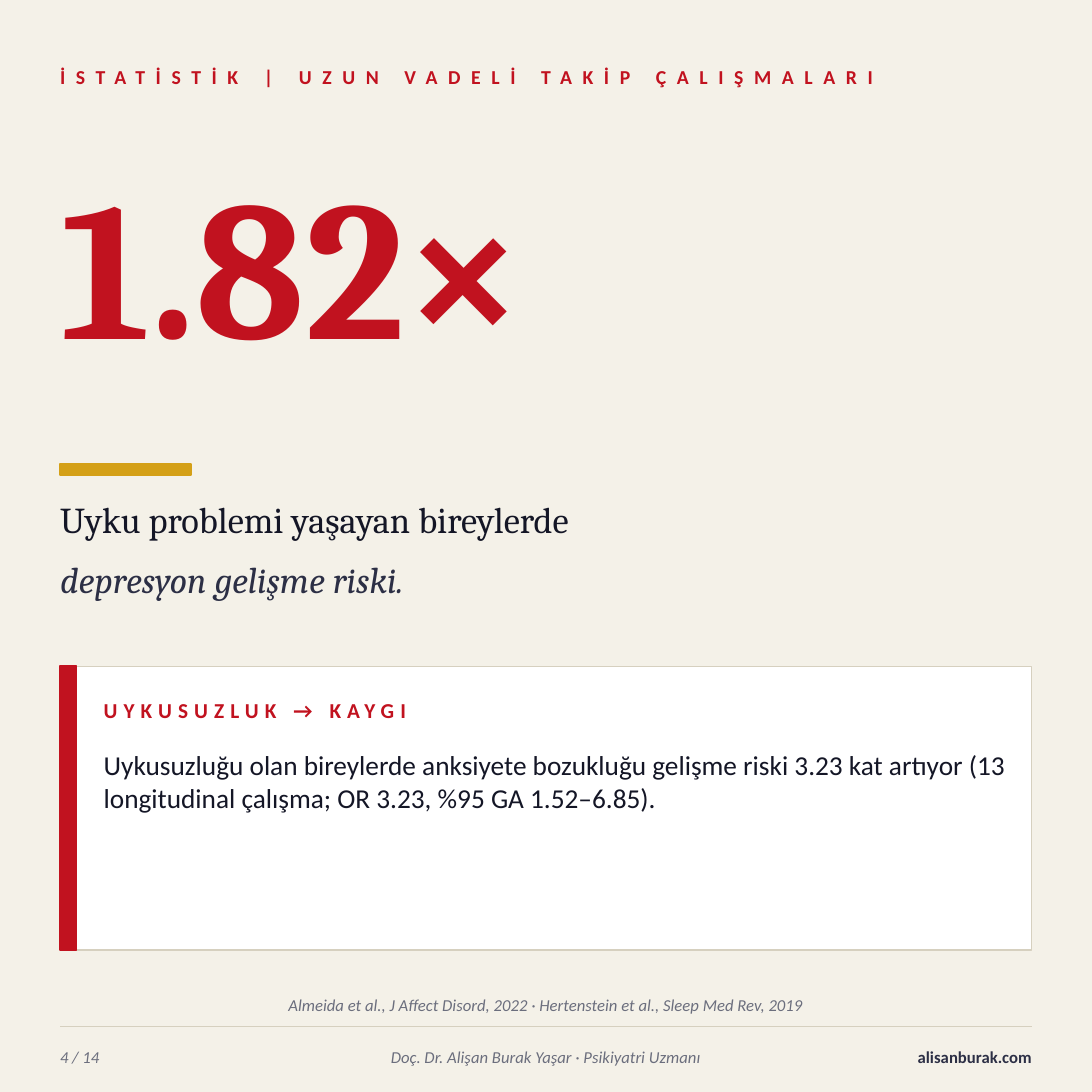
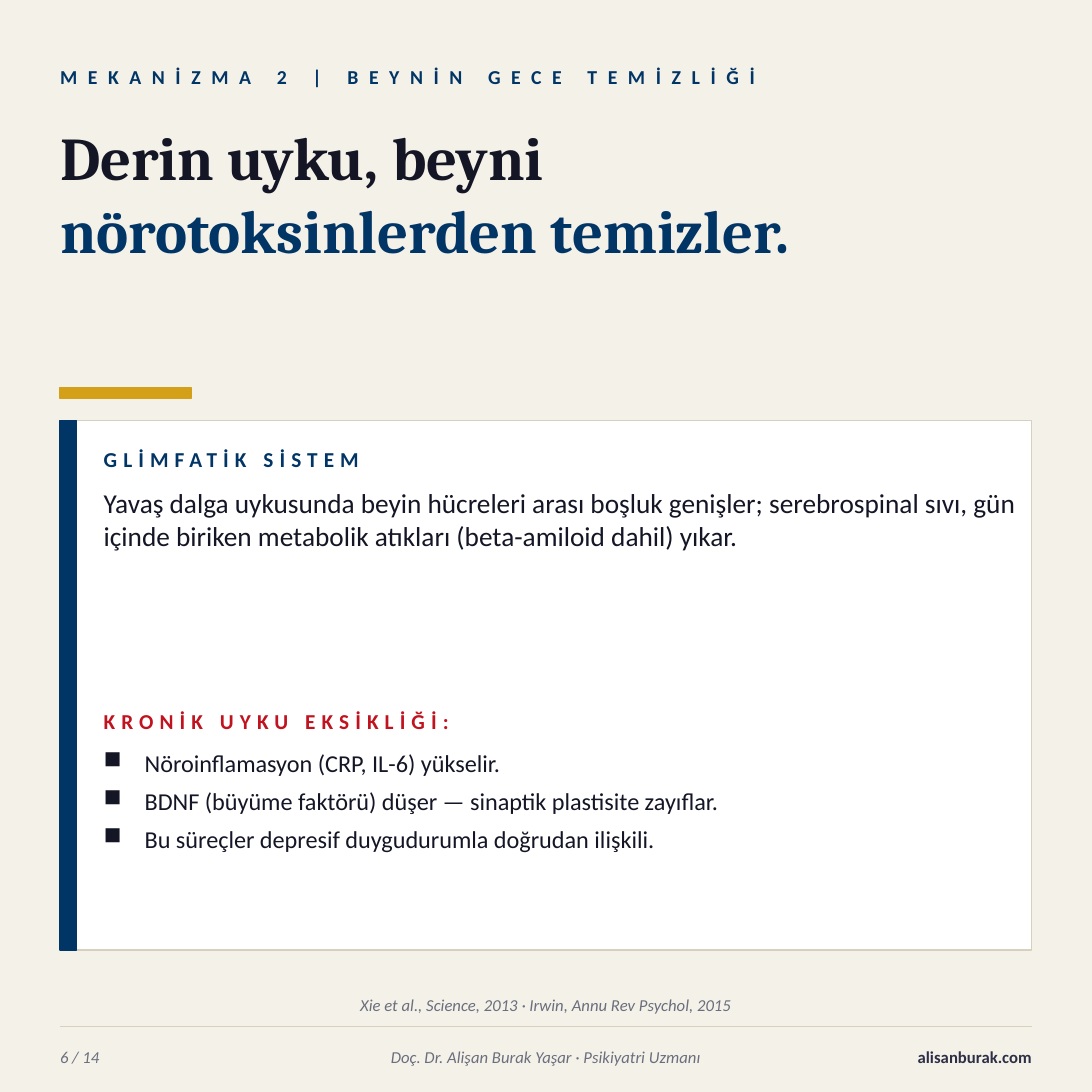
"""Build two square slides about sleep and mental health."""
from lxml.etree import SubElement
from pptx import Presentation
from pptx.dml.color import RGBColor
from pptx.enum.shapes import MSO_CONNECTOR as Connector, MSO_SHAPE as Shape
from pptx.enum.text import MSO_ANCHOR as Anchor, PP_ALIGN as Align
from pptx.oxml.ns import qn
from pptx.util import Pt

COLORS = {
    "paper": "F4F1E8", "white": "FFFFFF", "border": "D6D0BF", "gold": "D4A017",
    "red": "C1121F", "blue": "003566", "ink": "141626", "slate": "2C2F45", "gray": "6B6E7D",
}
SANS, SERIF = "Calibri", "Cambria"
SIZE, MARGIN = 720, 39.6
WIDTH = SIZE - 2 * MARGIN
CARD_BOTTOM = 626.4
INNER_LEFT, INNER_WIDTH = 68.4, 604.8
AUTHOR, SITE, TOTAL = "Doç. Dr. Alişan Burak Yaşar · Psikiyatri Uzmanı", "alisanburak.com", 14

SLIDES = [
    {
        "number": 4, "accent": "red",
        "kicker": "İSTATİSTİK | UZUN VADELİ TAKİP ÇALIŞMALARI",
        "headings": [
            {"lines": [("1.82×", "red")], "top": 93.6, "height": 201.6, "size": 130, "bold": True},
            {"lines": [("Uyku problemi yaşayan bireylerde", "ink")],
             "top": 327.6, "height": 39.6, "size": 24},
            {"lines": [("depresyon gelişme riski.", "slate")],
             "top": 367.2, "height": 39.6, "size": 24, "italic": True},
        ],
        "rule_top": 306, "card_top": 439.2,
        "sections": [
            {"label": "UYKUSUZLUK → KAYGI", "color": "red", "label_top": 453.6, "body_top": 493.2,
             "lines": ["Uykusuzluğu olan bireylerde anksiyete bozukluğu gelişme riski 3.23 kat "
                       "artıyor (13 longitudinal çalışma; OR 3.23, %95 GA 1.52–6.85)."]},
        ],
        "source": "Almeida et al., J Affect Disord, 2022 · Hertenstein et al., Sleep Med Rev, 2019",
    },
    {
        "number": 6, "accent": "blue",
        "kicker": "MEKANİZMA 2 | BEYNİN GECE TEMİZLİĞİ",
        "headings": [
            {"lines": [("Derin uyku, beyni", "ink"), ("nörotoksinlerden temizler.", "blue")],
             "top": 79.2, "height": 172.8, "size": 40, "bold": True},
        ],
        "rule_top": 255.6, "card_top": 277.2,
        "sections": [
            {"label": "GLİMFATİK SİSTEM", "color": "blue", "label_top": 288, "body_top": 320.4,
             "lines": ["Yavaş dalga uykusunda beyin hücreleri arası boşluk genişler; serebrospinal "
                       "sıvı, gün içinde biriken metabolik atıkları (beta-amiloid dahil) yıkar."]},
            {"label": "KRONİK UYKU EKSİKLİĞİ:", "color": "red", "label_top": 460.8, "body_top": 493.2,
             "lines": ["Nöroinflamasyon (CRP, IL-6) yükselir.",
                       "BDNF (büyüme faktörü) düşer — sinaptik plastisite zayıflar.",
                       "Bu süreçler depresif duygudurumla doğrudan ilişkili."],
             "format": {"size": 16, "bullet": "■", "gap": 6}},
        ],
        "source": "Xie et al., Science, 2013 · Irwin, Annu Rev Psychol, 2015",
    },
]


def rgb(name):
    return RGBColor.from_string(COLORS[name])


def add_text(slide, lines, *, top, height, left=MARGIN, width=WIDTH, size=11, font=SANS,
             color="ink", bold=False, italic=False, spacing=0, align=Align.LEFT,
             anchor=Anchor.TOP, bullet=None, gap=0):
    box = slide.shapes.add_textbox(Pt(left), Pt(top), Pt(width), Pt(height))
    frame = box.text_frame
    frame.word_wrap = True
    frame.vertical_anchor = anchor
    frame.margin_left = frame.margin_right = frame.margin_top = frame.margin_bottom = 0
    lines = [lines] if isinstance(lines, str) else lines
    for index, line in enumerate(lines):
        words, shade = (line, color) if isinstance(line, str) else line
        para = frame.paragraphs[0] if index == 0 else frame.add_paragraph()
        para.alignment = align
        if bullet:
            props = para._p.get_or_add_pPr()
            props.set("marL", str(Pt(27)))
            props.set("indent", str(-Pt(27)))
            SubElement(props, qn("a:buChar")).set("char", bullet)
        if gap and index < len(lines) - 1:
            para.space_after = Pt(gap)
        span = para.add_run()
        span.text = words
        span.font.size, span.font.name = Pt(size), font
        span.font.bold, span.font.italic = bold, italic
        span.font.color.rgb = rgb(shade)
        if spacing:
            span._r.get_or_add_rPr().set("spc", str(spacing * 100))


def add_block(slide, top, width, height, fill, line=None, weight=1):
    block = slide.shapes.add_shape(Shape.RECTANGLE, Pt(MARGIN), Pt(top), Pt(width), Pt(height))
    block.shadow.inherit = False
    block.fill.solid()
    block.fill.fore_color.rgb = rgb(fill)
    block.line.color.rgb = rgb(line or fill)
    block.line.width = Pt(weight)


def add_card(slide, top, accent, sections):
    height = CARD_BOTTOM - top
    add_block(slide, top, WIDTH, height, "white", "border", 0.75)
    add_block(slide, top, 10.8, height, accent)
    inner = {"left": INNER_LEFT, "width": INNER_WIDTH}
    for section in sections:
        add_text(slide, section["label"], top=section["label_top"], height=28.8, size=14,
                 color=section["color"], bold=True, spacing=4, anchor=Anchor.MIDDLE, **inner)
        style = {"size": 18, **section.get("format", {})}
        add_text(slide, section["lines"], top=section["body_top"], height=133.2, **inner, **style)


def add_footer(slide, number, source):
    note = {"color": "gray", "italic": True, "anchor": Anchor.MIDDLE}
    row = {"top": 684, "height": 25.2}
    add_text(slide, source, top=651.6, height=21.6, align=Align.CENTER, **note)
    rule = slide.shapes.add_connector(
        Connector.STRAIGHT, Pt(MARGIN), Pt(676.8), Pt(SIZE - MARGIN), Pt(676.8))
    rule.line.color.rgb = rgb("border")
    rule.line.width = Pt(0.75)
    SubElement(rule._element.spPr, qn("a:effectLst"))
    add_text(slide, f"{number} / {TOTAL}", width=108, **row, **note)
    add_text(slide, AUTHOR, left=144, width=432, align=Align.CENTER, **row, **note)
    add_text(slide, SITE, left=547.2, width=133.2, color="slate", bold=True,
             align=Align.RIGHT, anchor=Anchor.MIDDLE, **row)


def build_slide(deck, page):
    slide = deck.slides.add_slide(deck.slide_layouts[6])
    slide.background.fill.solid()
    slide.background.fill.fore_color.rgb = rgb("paper")
    add_text(slide, page["kicker"], top=36, height=28.8, size=13, color=page["accent"],
             bold=True, spacing=7, anchor=Anchor.MIDDLE)
    for heading in page["headings"]:
        add_text(slide, font=SERIF, **heading)
    add_block(slide, page["rule_top"], 86.4, 7.2, "gold")
    add_card(slide, page["card_top"], page["accent"], page["sections"])
    add_footer(slide, page["number"], page["source"])


def main():
    deck = Presentation()
    deck.slide_width = deck.slide_height = Pt(SIZE)
    for page in SLIDES:
        build_slide(deck, page)
    deck.save("out.pptx")


if __name__ == "__main__":
    main()
